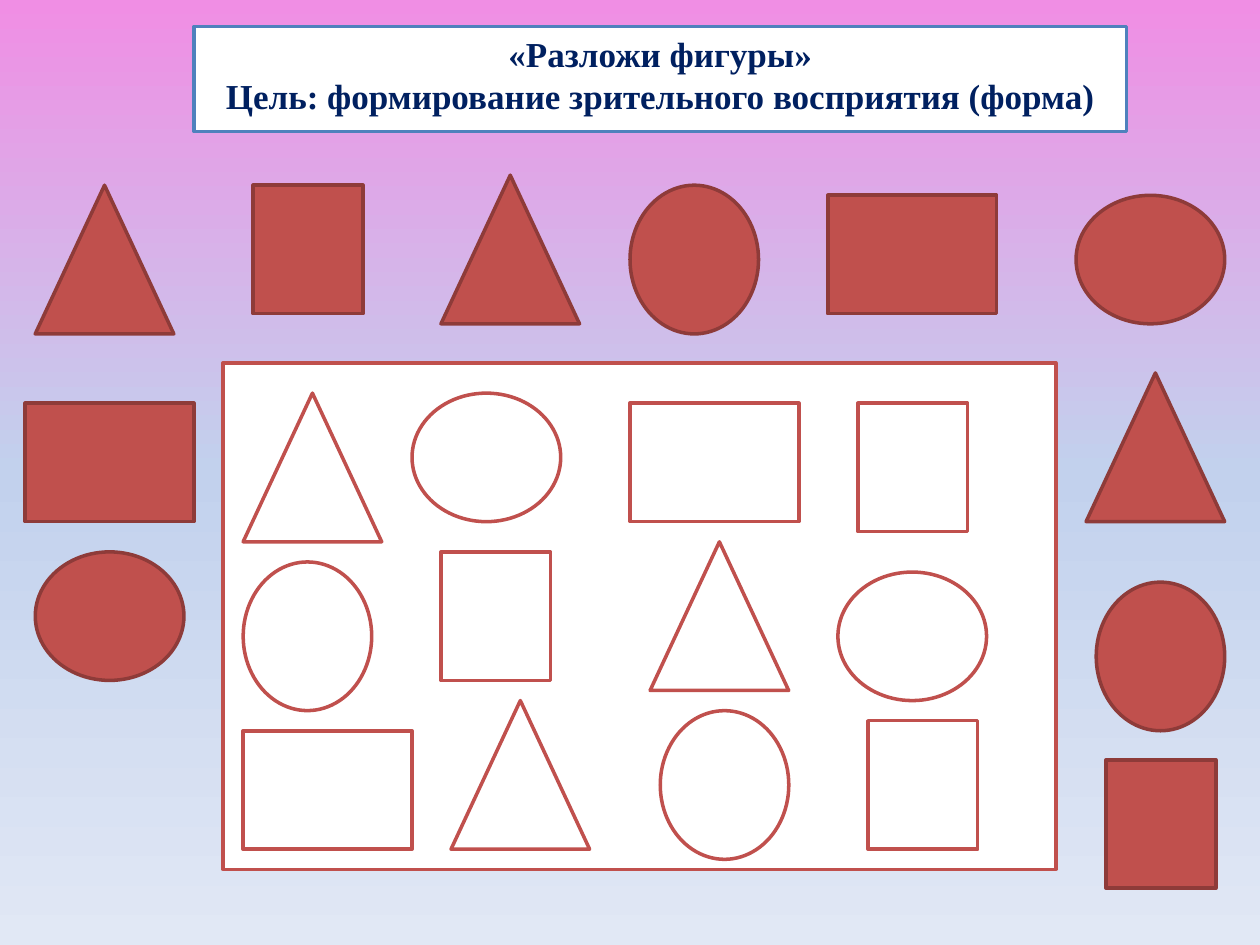
from copy import deepcopy

from pptx import Presentation
from pptx.dml.color import RGBColor
from pptx.enum.shapes import MSO_SHAPE as Preset
from pptx.enum.text import MSO_ANCHOR, MSO_AUTO_SIZE, PP_ALIGN
from pptx.oxml.ns import qn
from pptx.util import Inches, Pt

# Content
TITLE = ["«Разложи фигуры»", "Цель: формирование зрительного восприятия (форма)"]
TITLE_BOX = (1.54, 0.21, 7.4, 0.77)
BOARD_BOX = (1.77, 2.88, 6.61, 4.02)
BACKDROP = [(0, "F08EE4"), (0.5, "C2D1ED"), (1, "E1E8F5")]
WHITE, RED, DARK_RED, BLUE, NAVY = "FFFFFF", "C0504D", "8E3B39", "4F81BD", "002060"

# Each kind of figure: preset, width, height
FIGURES = {
    "triangle": (Preset.ISOSCELES_TRIANGLE, 1.1, 1.18),
    "square": (Preset.RECTANGLE, 0.87, 1.02),
    "rectangle": (Preset.RECTANGLE, 1.34, 0.94),
    "circle": (Preset.OVAL, 1.02, 1.18),
    "oval": (Preset.OVAL, 1.18, 1.02),
}

# Left and top of each figure
OUTLINES = [
    ("triangle", 1.93, 3.12), ("oval", 3.27, 3.12),
    ("rectangle", 5, 3.2), ("square", 6.81, 3.2),
    ("circle", 1.93, 4.46), ("square", 3.5, 4.38),
    ("triangle", 5.16, 4.3), ("oval", 6.65, 4.54),
    ("rectangle", 1.93, 5.8), ("triangle", 3.58, 5.56),
    ("circle", 5.24, 5.64), ("square", 6.89, 5.72),
]
PIECES = [
    # top row
    ("triangle", 0.28, 1.47), ("square", 2.01, 1.47), ("triangle", 3.5, 1.39),
    ("circle", 5, 1.47), ("rectangle", 6.57, 1.55), ("oval", 8.54, 1.55),
    # left side
    ("rectangle", 0.2, 3.2), ("oval", 0.28, 4.38),
    # right side
    ("triangle", 8.62, 2.96), ("circle", 8.7, 4.62), ("square", 8.78, 6.03),
]


def color(code):
    return RGBColor.from_string(code)


def paint(shape, fill, line):
    shape.fill.solid()
    shape.fill.fore_color.rgb = color(fill)
    shape.line.color.rgb = color(line)
    shape.line.width = Pt(2)


def write(frame, lines, *, size, font, ink, bold=False, align=PP_ALIGN.CENTER):
    for number, line in enumerate(lines):
        paragraph = frame.paragraphs[0] if number == 0 else frame.add_paragraph()
        paragraph.alignment = align
        run = paragraph.add_run()
        run.text = line
        run.font.size, run.font.name, run.font.bold = Pt(size), font, bold
        run.font.color.rgb = color(ink)


def add_figure(slide, preset, box, fill, line):
    figure = slide.shapes.add_shape(preset, *map(Inches, box))
    figure.shadow.inherit = False
    paint(figure, fill, line)


def set_backdrop(slide):
    fill = slide.background.fill
    fill.gradient()
    fill.gradient_angle = 270
    stops = slide.element.find(".//" + qn("a:gsLst"))
    stops.insert(1, deepcopy(stops[0]))
    for stop, (position, code) in zip(fill.gradient_stops, BACKDROP):
        stop.position = position
        stop.color.rgb = color(code)


def main():
    deck = Presentation()
    deck.slide_width, deck.slide_height = Inches(10), Inches(7.5)
    slide = deck.slides.add_slide(deck.slide_layouts[5])
    set_backdrop(slide)

    # Title
    title = slide.shapes.title
    title.left, title.top, title.width, title.height = map(Inches, TITLE_BOX)
    paint(title, WHITE, BLUE)
    frame = title.text_frame
    frame.word_wrap = True
    frame.auto_size = MSO_AUTO_SIZE.SHAPE_TO_FIT_TEXT
    frame.vertical_anchor = MSO_ANCHOR.TOP
    write(frame, TITLE, size=20, font="Times New Roman", ink=NAVY, bold=True)

    # Board with empty outlines, and the pieces around it
    add_figure(slide, Preset.RECTANGLE, BOARD_BOX, WHITE, RED)
    for group, fill, line in ((OUTLINES, WHITE, RED), (PIECES, RED, DARK_RED)):
        for kind, left, top in group:
            preset, width, height = FIGURES[kind]
            add_figure(slide, preset, (left, top, width, height), fill, line)

    deck.save("out.pptx")


if __name__ == "__main__":
    main()
